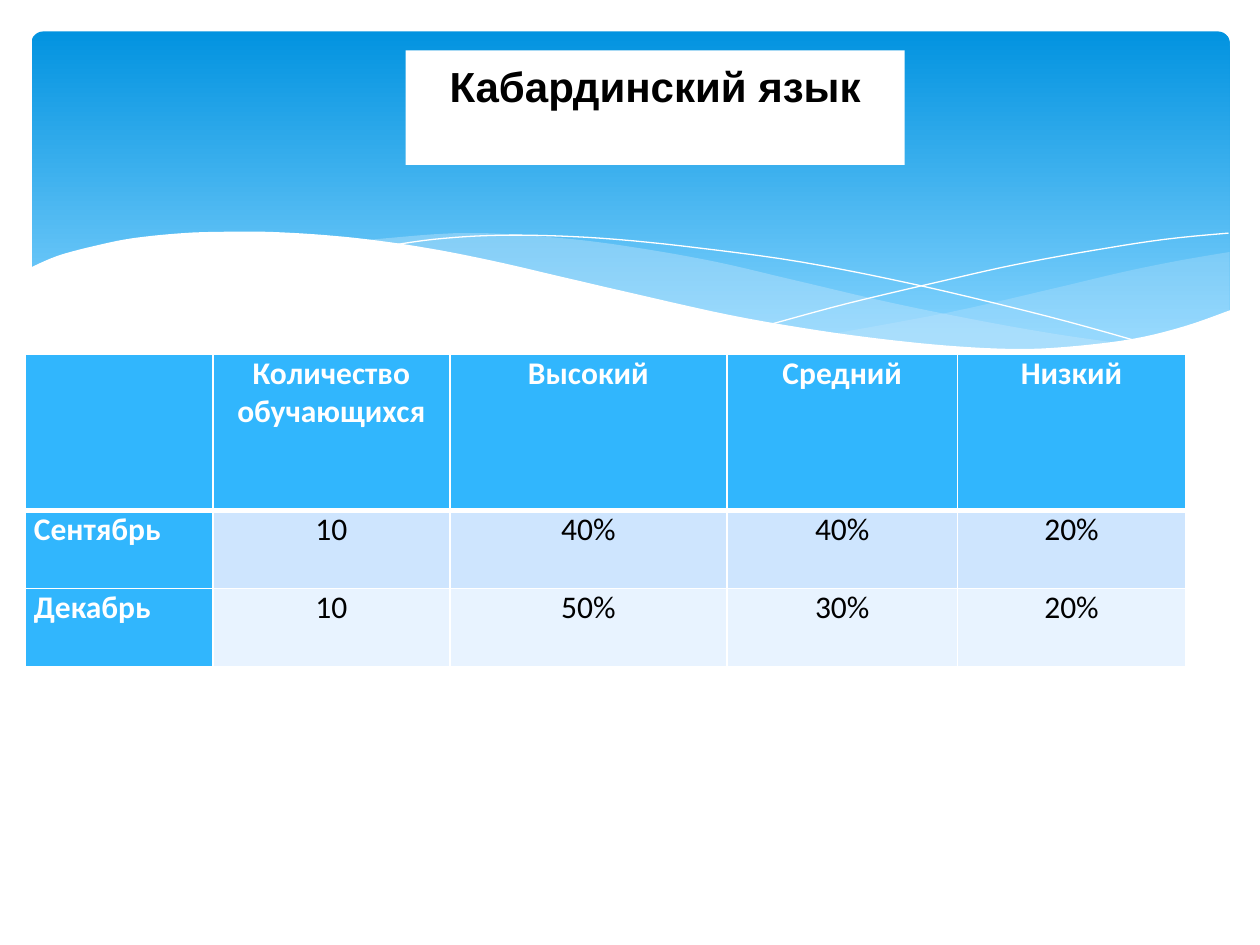
from lxml.etree import SubElement
from pptx import Presentation
from pptx.dml.color import RGBColor
from pptx.enum.shapes import MSO_SHAPE
from pptx.enum.text import MSO_ANCHOR, PP_ALIGN
from pptx.oxml.ns import qn
from pptx.util import Inches, Pt


def color(hex_text):
    return RGBColor.from_string(hex_text)


def smooth_curve(knots, steps=5):
    """Return points of a Catmull-Rom curve through the knots, in EMU."""
    padded = [knots[0], *knots, knots[-1]]
    curve = [knots[0]]
    for a, b, c, d in zip(padded, padded[1:], padded[2:], padded[3:]):
        for step in range(1, steps + 1):
            t = step / steps
            curve.append([
                (2 * q + (r - p) * t + (2 * p - 5 * q + 4 * r - s) * t ** 2
                 + (3 * q - p - 3 * r + s) * t ** 3) / 2
                for p, q, r, s in zip(a, b, c, d)])
    return [(Inches(x), Inches(y)) for x, y in curve]


prs = Presentation()
prs.slide_width, prs.slide_height = Inches(10), Inches(7.5)
slide = prs.slides.add_slide(prs.slide_layouts[5])
shapes = slide.shapes

# Blue banner
banner = shapes.add_shape(MSO_SHAPE.ROUNDED_RECTANGLE, Inches(0.25), Inches(0.25),
                          Inches(9.51), Inches(2.7))
banner.adjustments[0] = 0.034
banner.shadow.inherit = False
banner.line.fill.background()
banner.fill.gradient()
banner.fill.gradient_angle = 270
for stop, position, shade in zip(banner.fill.gradient_stops, (0, 0.9), ("0293E0", "83D3FE")):
    stop.position = position
    stop.color.rgb = color(shade)

# Waves: each is a chain of smooth edges, with fill, opacity in percent, or a hairline
right_wave = [
    [(9.76, 2), (9.35, 2.07), (8.91, 2.16), (8.32, 2.3), (7.53, 2.48), (6.61, 2.65)],
    [(6.61, 2.65), (7.19, 2.72), (7.69, 2.77), (8.14, 2.78), (8.63, 2.75), (9.05, 2.69),
     (9.42, 2.59), (9.76, 2.47)],
]
middle_wave = [
    [(8.93, 2.73), (8.37, 2.65), (7.75, 2.54), (7.06, 2.4), (6.29, 2.22), (5.69, 2.08),
     (5.14, 1.98), (4.65, 1.91), (4.2, 1.87), (3.8, 1.85), (3.44, 1.86), (2.86, 1.91)],
    [(2.86, 1.91), (3.42, 1.99), (4.04, 2.11), (4.49, 2.22), (5.3, 2.4), (6.01, 2.55),
     (6.65, 2.66), (7.22, 2.74), (7.73, 2.77), (8.18, 2.78), (8.57, 2.77), (8.93, 2.73)],
]
falling_line = [
    [(3.09, 1.95), (3.44, 1.9), (3.87, 1.87), (4.33, 1.87), (4.89, 1.9), (5.56, 1.97),
     (6.36, 2.08), (7.27, 2.26), (8.31, 2.51), (9.07, 2.72)],
]
rising_line = [
    [(6.13, 2.57), (6.72, 2.41), (7.48, 2.23), (8.06, 2.1), (8.66, 1.99), (9.24, 1.9),
     (9.75, 1.85)],
]
front_wave = [
    [(9.77, 2.46), (9.4, 2.59), (8.99, 2.69), (8.5, 2.75), (8.09, 2.77), (7.61, 2.75),
     (7.08, 2.7), (6.48, 2.62), (5.79, 2.5), (5.03, 2.33), (4.47, 2.2), (3.91, 2.07),
     (3.4, 1.97), (2.92, 1.9), (2.5, 1.86), (2.11, 1.84), (1.77, 1.84), (1.46, 1.85),
     (1.06, 1.89), (0.76, 1.95), (0.46, 2.03), (0.23, 2.13)],
    [(0.23, 3.29), (9.77, 3.29)],
]
waves = [
    (right_wave, "C6E7FC", 29),
    (middle_wave, "C6E7FC", 40),
    (falling_line, None, None),
    (rising_line, None, None),
    (front_wave, "FFFFFF", 100),
]
for edges, wave_fill, opacity in waves:
    outline = [point for edge in edges for point in smooth_curve(edge)]
    builder = shapes.build_freeform(*outline[0], scale=1.0)
    builder.add_line_segments(outline[1:], close=wave_fill is not None)
    wave = builder.convert_to_shape()
    wave.shadow.inherit = False
    if wave_fill:
        wave.line.fill.background()
        wave.fill.solid()
        wave.fill.fore_color.rgb = color(wave_fill)
        tint = wave.fill._xPr.find(qn("a:solidFill"))[0]
        SubElement(tint, qn("a:alpha"), val=str(opacity * 1000))
    else:
        wave.fill.background()
        wave.line.color.rgb = color("FFFFFF")
        wave.line.width = Pt(0)

# Results table
results = [
    ["", "Количество обучающихся", "Высокий", "Средний", "Низкий"],
    ["Сентябрь", "10", "40%", "40%", "20%"],
    ["Декабрь", "10", "50%", "30%", "20%"],
]
row_fills = ["31B6FD", "CEE5FE", "E8F3FF"]
table = shapes.add_table(3, 5, Inches(0.2), Inches(2.81), Inches(9.21), Inches(2.48)).table
for column, width in zip(table.columns, (1.49, 1.88, 2.2, 1.83, 1.81)):
    column.width = Inches(width)
for row, height in zip(table.rows, (1.24, 0.62, 0.62)):
    row.height = Inches(height)

for r, values in enumerate(results):
    for c, value in enumerate(values):
        cell = table.cell(r, c)
        heading = r == 0 or c == 0
        cell.margin_left = cell.margin_right = Inches(0 if c == 1 else 0.07)
        cell.margin_top = cell.margin_bottom = 0

        borders = {"lnL": 1, "lnR": 1, "lnT": 3 if r == 1 else 1, "lnB": 3 if r == 0 else 1}
        for side, points in borders.items():
            border = SubElement(cell._tc.get_or_add_tcPr(), qn(f"a:{side}"), w=str(Pt(points)))
            SubElement(SubElement(border, qn("a:solidFill")), qn("a:srgbClr"), val="FFFFFF")
        cell.fill.solid()
        cell.fill.fore_color.rgb = color(row_fills[0] if heading else row_fills[r])

        cell.text_frame.text = value
        paragraph = cell.text_frame.paragraphs[0]
        paragraph.alignment = PP_ALIGN.LEFT if c == 0 else PP_ALIGN.CENTER
        paragraph.font.size = Pt(18)
        for run in paragraph.runs:
            run.font.name = "Calibri"
            run.font.size = Pt(18)
            run.font.bold = heading
            run.font.color.rgb = color("FFFFFF" if heading else "000000")

# Title, in front of the banner
title = shapes.title
title.left, title.top, title.width, title.height = map(Inches, (3.22, 0.4, 3.96, 0.91))
title.fill.solid()
title.fill.fore_color.rgb = color("FFFFFF")
title.text_frame.text = "Кабардинский язык"
title.text_frame.vertical_anchor = MSO_ANCHOR.TOP
title.text_frame.margin_top = Inches(0.08)
title_line = title.text_frame.paragraphs[0]
title_line.alignment = PP_ALIGN.CENTER
title_font = title_line.runs[0].font
title_font.name, title_font.size, title_font.bold = "Arial", Pt(24), True
title_font.color.rgb = color("000000")
shapes._spTree.append(title._element)

prs.save("out.pptx")
